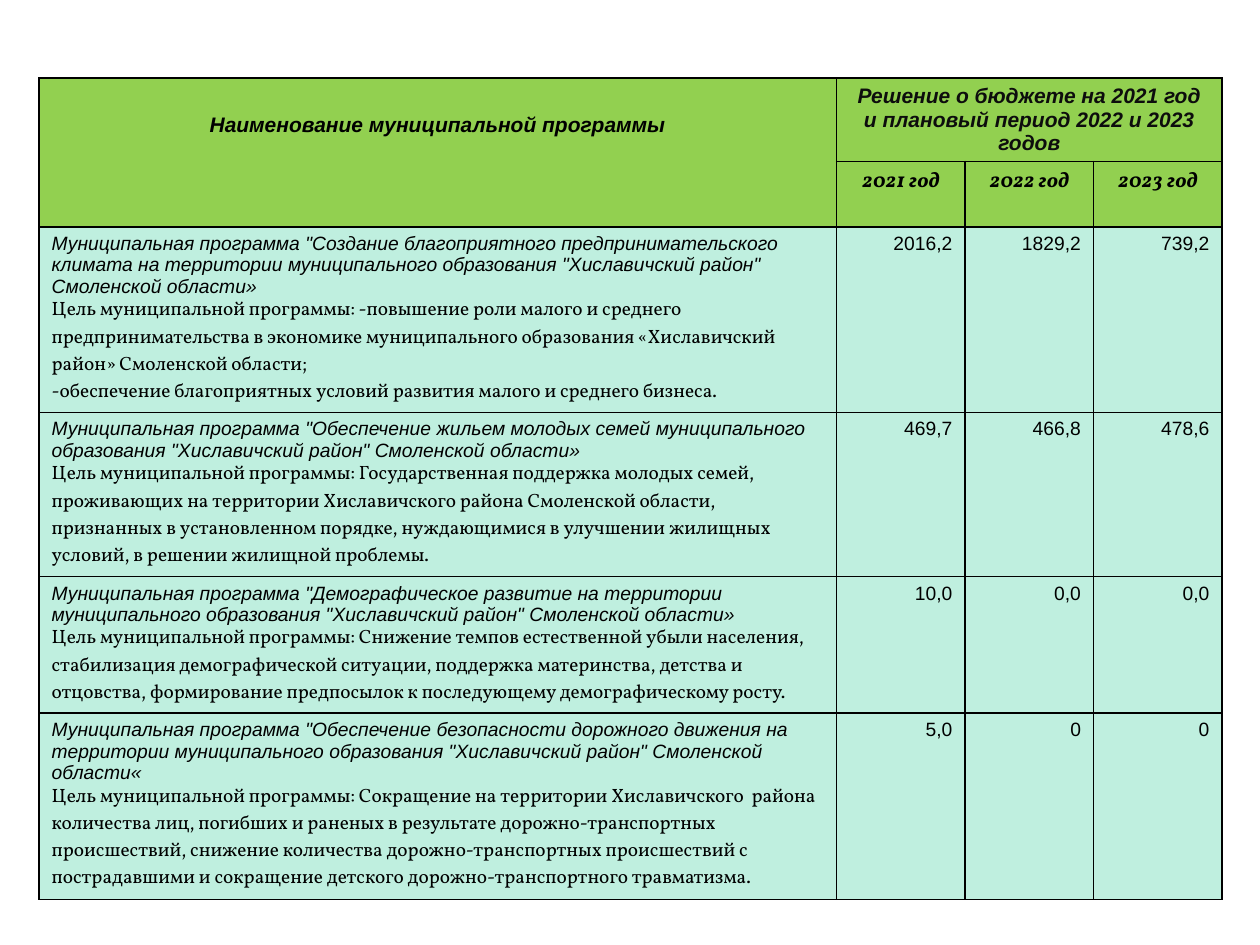
from lxml import etree
from pptx import Presentation
from pptx import util as u
from pptx.dml.color import RGBColor
from pptx.enum import text
from pptx.oxml import ns

HUES = {"head": "92D050", "body": "BFEFDF", "ink": "000000", "soft": "0D0D0D"}
NAME = "Наименование муниципальной программы"
SPAN = "Решение о бюджете на 2021 год и плановый период 2022 и 2023 годов"
YEARS = ["2021 год", "2022 год", "2023 год"]
PLANS = [
    (["Муниципальная программа \"Создание благоприятного предпринимательского климата на территории муниципального образования \"Хиславичский район\" Смоленской области»",
      "Цель муниципальной программы: -повышение роли малого и среднего предпринимательства в экономике муниципального образования «Хиславичский район» Смоленской области;",
      "-обеспечение благоприятных условий развития малого и среднего бизнеса."],
     ["2016,2", "1829,2", "739,2"]),
    (["Муниципальная программа \"Обеспечение жильем молодых семей муниципального образования \"Хиславичский район\" Смоленской области»",
      "Цель муниципальной программы: Государственная поддержка молодых семей, проживающих на территории Хиславичского района Смоленской области, признанных в установленном порядке, нуждающимися в улучшении жилищных условий, в решении жилищной проблемы."],
     ["469,7", "466,8", "478,6"]),
    (["Муниципальная программа \"Демографическое развитие на территории муниципального образования \"Хиславичский район\" Смоленской области»",
      "Цель муниципальной программы: Снижение темпов естественной убыли населения, стабилизация демографической ситуации, поддержка материнства, детства и отцовства, формирование предпосылок к последующему демографическому росту."],
     ["10,0", "0,0", "0,0"]),
    (["Муниципальная программа \"Обеспечение безопасности дорожного движения на территории муниципального образования \"Хиславичский район\" Смоленской области«",
      "Цель муниципальной программы: Сокращение на территории Хиславичского  района количества лиц, погибших и раненых в результате дорожно-транспортных происшествий, снижение количества дорожно-транспортных происшествий с пострадавшими и сокращение детского дорожно-транспортного травматизма."],
     ["5,0", "0", "0"]),
]
COLS = [6.33, 1.02, 1.02, 1.02]
ROWS = [0.66, 0.52, 1.47, 1.3, 1.08, 1.48]
LEFT, TOP = 0.31, 0.62
MID, END, START = text.PP_ALIGN.CENTER, text.PP_ALIGN.RIGHT, text.PP_ALIGN.LEFT


def style(cell, hue):
    props = cell._tc.get_or_add_tcPr()
    for side in ("lnL", "lnR", "lnT", "lnB"):
        line = etree.SubElement(props, ns.qn(f"a:{side}"), w=str(u.Pt(1)))
        fill = etree.SubElement(line, ns.qn("a:solidFill"))
        etree.SubElement(fill, ns.qn("a:srgbClr"), val=HUES["ink"])
    cell.fill.solid()
    cell.fill.fore_color.rgb = RGBColor.from_string(HUES[hue])


def write(cell, lines, align, size, face="Arial", bold=False, slant=False, hue="ink"):
    frame = cell.text_frame
    for i, line in enumerate(lines):
        para = frame.add_paragraph() if i else frame.paragraphs[0]
        para.alignment = align
        run = para.add_run()
        run.text = line
        font = run.font
        font.size = u.Pt(size)
        font.name = "Vollkorn" if i else face
        font.bold = bold
        font.italic = slant and i == 0
        font.color.rgb = RGBColor.from_string(HUES[hue])


def main():
    deck = Presentation()
    deck.slide_width, deck.slide_height = u.Inches(10), u.Inches(7.5)
    slide = deck.slides.add_slide(deck.slide_layouts[6])
    grid = slide.shapes.add_table(
        len(ROWS), len(COLS), u.Inches(LEFT), u.Inches(TOP),
        u.Inches(sum(COLS)), u.Inches(sum(ROWS))).table
    for col, wide in zip(grid.columns, COLS):
        col.width = u.Inches(wide)
    for r, (row, high) in enumerate(zip(grid.rows, ROWS)):
        row.height = u.Inches(high)
        for cell in row.cells:
            style(cell, "head" if r < 2 else "body")

    grid.cell(0, 0).merge(grid.cell(1, 0))
    grid.cell(0, 1).merge(grid.cell(0, 3))
    grid.cell(0, 0).margin_top = u.Inches(0.28)
    write(grid.cell(0, 0), [NAME], MID, 12, bold=True, slant=True)
    write(grid.cell(0, 1), [SPAN], MID, 12, bold=True, slant=True, hue="soft")
    for c, year in enumerate(YEARS, 1):
        write(grid.cell(1, c), [year], MID, 12, "Vollkorn", bold=True, slant=True)
    for r, (lines, sums) in enumerate(PLANS, 2):
        write(grid.cell(r, 0), lines, START, 11, slant=True)
        for c, value in enumerate(sums, 1):
            write(grid.cell(r, c), [value], END, 11)
    deck.save("out.pptx")


if __name__ == "__main__":
    main()
